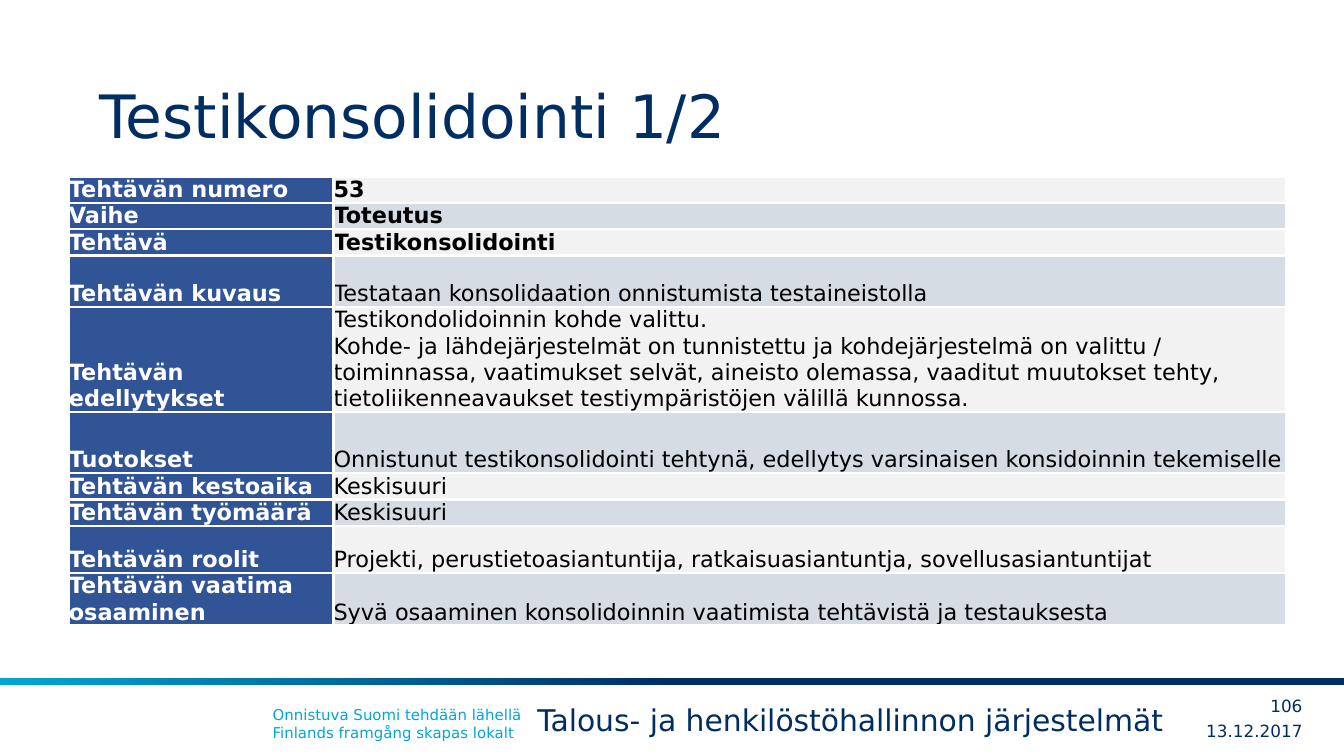
import pptx
import pptx.dml.color
import pptx.enum.shapes
import pptx.enum.text
import pptx.util
from lxml import etree

Pt = pptx.util.Pt
ANCHOR = pptx.enum.text.MSO_ANCHOR
ALIGN = pptx.enum.text.PP_ALIGN
FONT = "DejaVu Sans"
NAVY, CYAN, WHITE, BLACK = "002E63", "00A6D6", "FFFFFF", "000000"
LABEL_FILL = "305496"
BAND_FILLS = ("F2F2F2", "D6DCE4")

TITLE = "Testikonsolidointi 1/2"
COLUMN_WIDTHS = (141.8, 510.5)
BOLD_ROWS = 3
TASK_ROWS = [
    ("Tehtävän numero", "53", 14),
    ("Vaihe", "Toteutus", 14),
    ("Tehtävä", "Testikonsolidointi", 14.2),
    ("Tehtävän kuvaus", "Testataan konsolidaation onnistumista testaineistolla", 27.6),
    ("Tehtävän edellytykset",
     "Testikondolidoinnin kohde valittu.\vKohde- ja lähdejärjestelmät on tunnistettu "
     "ja kohdejärjestelmä on valittu / toiminnassa, vaatimukset selvät, aineisto olemassa, "
     "vaaditut muutokset tehty, tietoliikenneavaukset testiympäristöjen välillä kunnossa.", 56.2),
    ("Tuotokset",
     "Onnistunut testikonsolidointi tehtynä, edellytys varsinaisen konsidoinnin tekemiselle", 32.7),
    ("Tehtävän kestoaika", "Keskisuuri", 14.2),
    ("Tehtävän työmäärä", "Keskisuuri", 14.2),
    ("Tehtävän roolit",
     "Projekti, perustietoasiantuntija, ratkaisuasiantuntja, sovellusasiantuntijat", 25.2),
    ("Tehtävän vaatima osaaminen",
     "Syvä osaaminen konsolidoinnin vaatimista tehtävistä ja testauksesta", 27.9),
]
FOOTER_TEXTS = [
    ("Onnistuva Suomi tehdään lähellä\vFinlands framgång skapas lokalt",
     (139, 374.4, 470.9, 26.6), 8, CYAN),
    ("Talous- ja henkilöstöhallinnon järjestelmät", (280.8, 372.2, 360, 26.6), 16, NAVY),
]
CORNER_TEXTS = [
    ("106", (666.7, 370.1, 31, 15.8)),
    ("13.12.2017", (626.4, 383.8, 71.3, 15.8)),
]


def color(value):
    return pptx.dml.color.RGBColor.from_string(value)


def write(frame, text, size, ink, bold=False, align=ALIGN.LEFT):
    frame.word_wrap = True
    paragraph = frame.paragraphs[0]
    paragraph.text = text
    paragraph.alignment = align
    paragraph.font.name = FONT
    paragraph.font.size = Pt(size)
    paragraph.font.bold = bold
    paragraph.font.color.rgb = color(ink)


def set_margins(item, horizontal, vertical):
    item.margin_left = item.margin_right = Pt(horizontal)
    item.margin_top = item.margin_bottom = Pt(vertical)


def add_text(page, text, bounds, size, ink, align=ALIGN.LEFT):
    box = page.shapes.add_textbox(*map(Pt, bounds))
    write(box.text_frame, text, size, ink, align=align)
    return box.text_frame


def add_borders(cell, ink, width):
    properties = cell._tc.get_or_add_tcPr()
    namespace = "{http://schemas.openxmlformats.org/drawingml/2006/main}"
    for index, side in enumerate("LRTB"):
        line = etree.Element(f"{namespace}ln{side}", w=str(Pt(width)))
        fill = etree.SubElement(line, f"{namespace}solidFill")
        etree.SubElement(fill, f"{namespace}srgbClr", val=ink)
        properties.insert(index, line)


def fill_cell(cell, text, ink, background, bold):
    set_margins(cell, 0, 0)
    cell.vertical_anchor = ANCHOR.BOTTOM
    cell.fill.solid()
    cell.fill.fore_color.rgb = color(background)
    add_borders(cell, WHITE, 1.5)
    write(cell.text_frame, text, 12, ink, bold)


def add_title(page):
    title = page.shapes.title
    title.left, title.top, title.width, title.height = map(Pt, (53.3, 16.6, 612.7, 67.7))
    frame = title.text_frame
    set_margins(frame, 0, 3.6)
    frame.vertical_anchor = ANCHOR.BOTTOM
    write(frame, TITLE, 32, NAVY)


def add_task_table(page):
    height = sum(row[2] for row in TASK_ROWS)
    bounds = (36.9, 94.6, sum(COLUMN_WIDTHS), height)
    table = page.shapes.add_table(len(TASK_ROWS), 2, *map(Pt, bounds)).table
    for column, width in zip(table.columns, COLUMN_WIDTHS):
        column.width = Pt(width)
    for index, (label, value, row_height) in enumerate(TASK_ROWS):
        table.rows[index].height = Pt(row_height)
        fill_cell(table.cell(index, 0), label, WHITE, LABEL_FILL, True)
        fill_cell(table.cell(index, 1), value, BLACK, BAND_FILLS[index % 2], index < BOLD_ROWS)


def add_footer(page):
    band = page.shapes.add_shape(
        pptx.enum.shapes.MSO_SHAPE.RECTANGLE, *map(Pt, (0, 363.4, 720, 3.8)))
    band.shadow.inherit = False
    band.line.fill.background()
    band.fill.gradient()
    band.fill.gradient_angle = 180
    for stop, position, ink in zip(band.fill.gradient_stops, (0.5, 1), (NAVY, CYAN)):
        stop.position = position
        stop.color.rgb = color(ink)
    for text, bounds, size, ink in FOOTER_TEXTS:
        add_text(page, text, bounds, size, ink)
    for text, bounds in CORNER_TEXTS:
        frame = add_text(page, text, bounds, 9, NAVY, ALIGN.RIGHT)
        set_margins(frame, 0, 0)
        frame.vertical_anchor = ANCHOR.MIDDLE


def main():
    deck = pptx.Presentation()
    deck.slide_width, deck.slide_height = Pt(720), Pt(405)
    page = deck.slides.add_slide(deck.slide_layouts[5])
    add_title(page)
    add_task_table(page)
    add_footer(page)
    deck.save("out.pptx")


if __name__ == "__main__":
    main()
